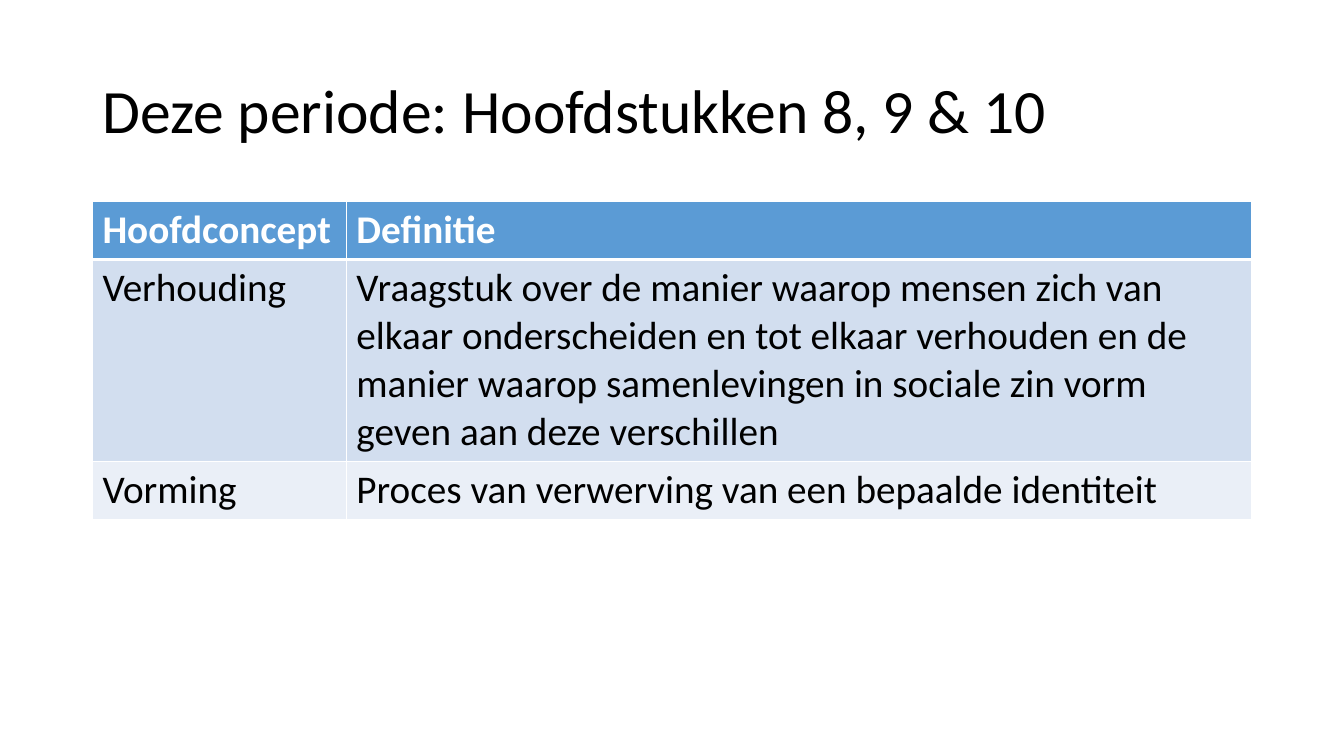
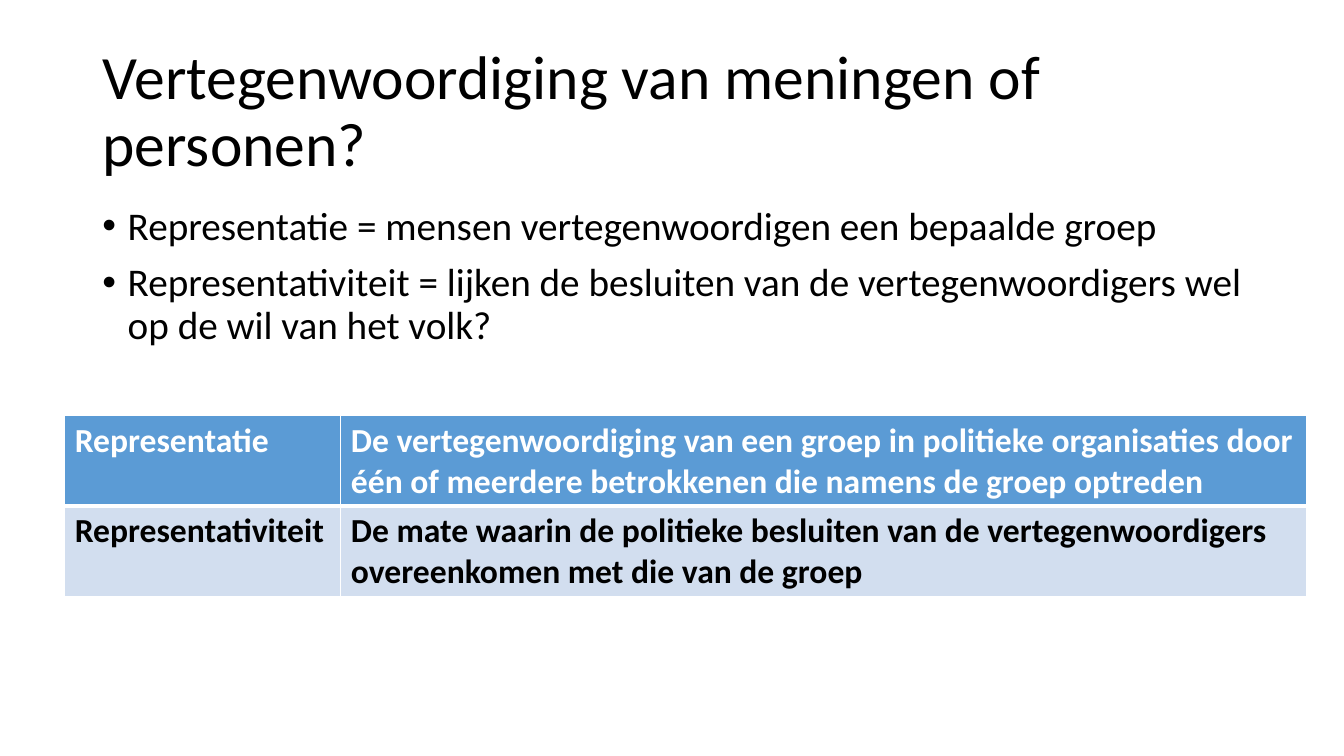
from dataclasses import dataclass

from lxml.etree import SubElement
from pptx import Presentation
from pptx.dml.color import RGBColor as Rgb
from pptx.enum.text import MSO_ANCHOR as Anchor, MSO_AUTO_SIZE as AutoSize, PP_ALIGN as Align
from pptx.oxml.ns import qn
from pptx.util import Cm, Pt


@dataclass(frozen=True)
class Theme:
    font: str = "Calibri"
    ink: Rgb = Rgb(0x00, 0x00, 0x00)
    paper: Rgb = Rgb(0xFF, 0xFF, 0xFF)
    header: Rgb = Rgb(0x5B, 0x9B, 0xD5)
    bands: tuple = (Rgb(0xD2, 0xDE, 0xEF), Rgb(0xEA, 0xEF, 0xF7))
    title_size: int = 44
    body_size: int = 28
    small_size: int = 24
    thin: int = 1
    thick: int = 3


theme = Theme()


def write(frame, *texts, size, color=theme.ink, bold=False, spacing=1.0, before=0, bullet=None):
    frame.word_wrap = True
    for index, text in enumerate(texts):
        paragraph = frame.add_paragraph() if index else frame.paragraphs[0]
        paragraph.alignment = Align.LEFT
        paragraph.line_spacing = spacing
        paragraph.space_before = Pt(before)
        run = paragraph.add_run()
        run.text = text
        run.font.name = theme.font
        run.font.size = Pt(size)
        run.font.bold = bold
        run.font.color.rgb = color
        if bullet:
            properties = paragraph._p.get_or_add_pPr()
            properties.set("marL", str(Cm(0.64)))
            properties.set("indent", str(-Cm(0.64)))
            SubElement(properties, qn("a:buFont"), typeface="Arial")
            SubElement(properties, qn("a:buChar"), char=bullet)


def add_border(cell, side, width):
    line = SubElement(cell._tc.get_or_add_tcPr(), qn(f"a:ln{side}"), w=str(Pt(width)))
    fill = SubElement(line, qn("a:solidFill"))
    SubElement(fill, qn("a:srgbClr"), val=str(theme.paper))


lessons = [
    {
        "title": "Deze periode: Hoofdstukken 8, 9 & 10",
        "bullets": [],
        "concepts": [
            ("Hoofdconcept", "Definitie"),
            (
                "Verhouding",
                "Vraagstuk over de manier waarop mensen zich van elkaar onderscheiden en tot elkaar "
                "verhouden en de manier waarop samenlevingen in sociale zin vorm geven aan deze verschillen",
            ),
            ("Vorming", "Proces van verwerving van een bepaalde identiteit"),
        ],
        "corner": (2.33, 5.08),
        "widths": (6.4, 22.81),
        "heights": (1.44, 5.08, 1.44),
        "size": theme.body_size,
        "bold_rows": False,
    },
    {
        "title": "Vertegenwoordiging van meningen of personen?",
        "bullets": [
            "Representatie = mensen vertegenwoordigen een bepaalde groep",
            "Representativiteit = lijken de besluiten van de vertegenwoordigers wel op de wil van het volk?",
        ],
        "concepts": [
            (
                "Representatie",
                "De vertegenwoordiging van een groep in politieke organisaties door één of meerdere "
                "betrokkenen die namens de groep optreden",
            ),
            (
                "Representativiteit",
                "De mate waarin de politieke besluiten van de vertegenwoordigers overeenkomen met die van de groep",
            ),
        ],
        "corner": (1.63, 10.46),
        "widths": (6.96, 24.33),
        "heights": (2.29, 2.29),
        "size": theme.small_size,
        "bold_rows": True,
    },
]

deck = Presentation()
deck.slide_width, deck.slide_height = Cm(33.87), Cm(19.05)
title_only = deck.slide_layouts[5]
margin, content_width = Cm(2.33), Cm(29.21)

for lesson in lessons:
    slide = deck.slides.add_slide(title_only)
    heading = slide.shapes.title
    heading.left, heading.top = margin, Cm(1.01)
    heading.width, heading.height = content_width, Cm(3.68)
    heading.text_frame.vertical_anchor = Anchor.MIDDLE
    heading.text_frame.auto_size = AutoSize.NONE
    write(heading.text_frame, lesson["title"], size=theme.title_size, spacing=0.9)

    if lesson["bullets"]:
        explanation = slide.shapes.add_textbox(margin, Cm(5.08), content_width, Cm(12.09))
        write(explanation.text_frame, *lesson["bullets"], size=theme.body_size, spacing=0.9, before=10, bullet="•")

    left, top = lesson["corner"]
    widths, heights = lesson["widths"], lesson["heights"]
    concepts = slide.shapes.add_table(
        len(heights), len(widths), Cm(left), Cm(top), Cm(sum(widths)), Cm(sum(heights))
    ).table
    for column, width in zip(concepts.columns, widths):
        column.width = Cm(width)

    for row_index, texts in enumerate(lesson["concepts"]):
        concepts.rows[row_index].height = Cm(heights[row_index])
        is_header = row_index == 0
        top_line = theme.thick if row_index == 1 else theme.thin
        bottom_line = theme.thick if is_header else theme.thin
        for column_index, text in enumerate(texts):
            cell = concepts.cell(row_index, column_index)
            for side, width in zip("LRTB", (theme.thin, theme.thin, top_line, bottom_line)):
                add_border(cell, side, width)
            cell.fill.solid()
            cell.fill.fore_color.rgb = theme.header if is_header else theme.bands[(row_index - 1) % 2]
            write(
                cell.text_frame,
                text,
                size=lesson["size"],
                color=theme.paper if is_header else theme.ink,
                bold=is_header or lesson["bold_rows"],
            )

deck.save("out.pptx")
